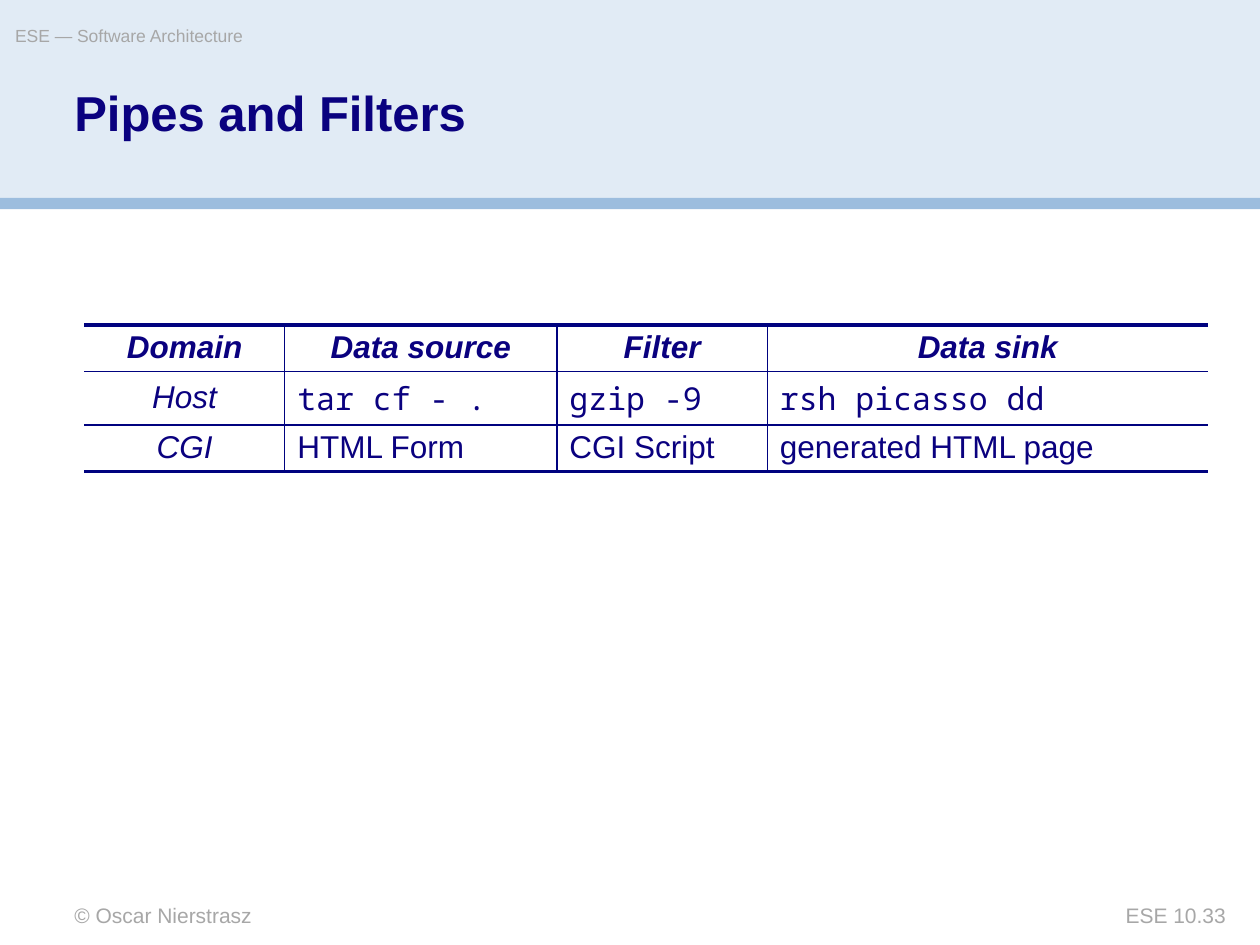
"""Build the Pipes and Filters slide on a grid of 100 columns by 75 rows."""
from dataclasses import dataclass

from lxml import etree
from pptx import Presentation
from pptx import util as u
from pptx.dml import color
from pptx.enum import shapes, text
from pptx.oxml import ns


@dataclass(frozen=True)
class Theme:
    band: str = "E1EBF5"
    rule: str = "9CBDDE"
    ink: str = "0A017F"
    border: str = "00027F"
    muted: str = "A7A7A7"
    sans: str = "Arial"
    mono: str = "Noto Sans Mono"
    title_size: float = 28
    cell_size: float = 18
    footer_size: float = 12
    header_size: float = 10
    thick: float = 2.25
    thin: float = 1


THEME = Theme()


@dataclass(frozen=True)
class Area:
    column: float
    row: float
    columns: float
    rows: float

    def place(self) -> tuple:
        return tuple(map(grid, (self.column, self.row, self.columns, self.rows)))


@dataclass(frozen=True)
class Style:
    size: float
    tint: str
    font: str = THEME.sans
    bold: bool = False
    italic: bool = False


@dataclass(frozen=True)
class Label:
    area: Area
    words: str
    size: float
    align: text.PP_ALIGN = text.PP_ALIGN.LEFT
    wrap: bool = True


BANDS = [
    (Area(0, 0, 100, 15.8), THEME.band),
    (Area(0, 15.7, 100, 0.9), THEME.rule),
]
LABELS = [
    Label(Area(5.9, 71.6, 41.7, 2), "© Oscar Nierstrasz", THEME.footer_size),
    Label(Area(1.2, 2, 59, 2.8), "ESE — Software Architecture", THEME.header_size, wrap=False),
    Label(Area(82.5, 71.6, 14.8, 2), "ESE 10.33", THEME.footer_size, text.PP_ALIGN.RIGHT),
]
TITLE_AREA = Area(5.9, 7.1, 72.4, 8.9)
TABLE_AREA = Area(6.7, 25.8, 89.2, 11.6)
COLUMN_SPANS = (15.9, 21.6, 16.7, 35)
ROW_SPANS = (3.7, 4.2, 3.7)
CELLS = [
    ("Domain", "Data source", "Filter", "Data sink"),
    ("Host", "tar cf - .", "gzip -9", "rsh picasso dd"),
    ("CGI", "HTML Form", "CGI Script", "generated HTML page"),
]
COMMAND_ROW = 1


def grid(units: float) -> int:
    """Turn grid units into a length."""
    return u.Inches(units / 10)


def write(frame, words: str, style: Style, align=text.PP_ALIGN.LEFT, spacing: float = 1) -> None:
    """Write one styled paragraph into a text frame."""
    para = frame.paragraphs[0]
    para.alignment = align
    para.line_spacing = spacing
    span = para.add_run()
    span.text = words
    font = span.font
    font.name, font.size = style.font, u.Pt(style.size)
    font.bold, font.italic = style.bold, style.italic
    font.color.rgb = color.RGBColor.from_string(style.tint)


def prepare(frame, wrap: bool = True) -> None:
    """Clear the insets and anchor the text at the top."""
    frame.margin_left = frame.margin_top = frame.margin_right = frame.margin_bottom = 0
    frame.vertical_anchor = text.MSO_ANCHOR.TOP
    frame.auto_size = text.MSO_AUTO_SIZE.NONE
    frame.word_wrap = wrap


def draw_band(page, area: Area, tint: str) -> None:
    """Draw a plain full-width band."""
    box = page.shapes.add_shape(shapes.MSO_SHAPE.RECTANGLE, *area.place())
    box.shadow.inherit = False
    box.fill.solid()
    box.fill.fore_color.rgb = color.RGBColor.from_string(tint)
    box.line.fill.background()


def draw_label(page, label: Label) -> None:
    """Draw a muted header or footer text."""
    frame = page.shapes.add_textbox(*label.area.place()).text_frame
    prepare(frame, label.wrap)
    write(frame, label.words, Style(label.size, THEME.muted), label.align)


def draw_title(page, words: str) -> None:
    """Move the title placeholder above the bands and fill it."""
    title = page.shapes.title
    title.left, title.top, title.width, title.height = TITLE_AREA.place()
    title.element.getparent().append(title.element)
    prepare(title.text_frame)
    write(title.text_frame, words, Style(THEME.title_size, THEME.ink, bold=True), spacing=0.9)


def set_borders(cell, widths: dict[str, float]) -> None:
    """Set the cell's four borders, where zero width means none."""
    properties = cell._tc.get_or_add_tcPr()
    for side, width in widths.items():
        line = etree.SubElement(properties, ns.qn(f"a:ln{side}"), w=str(u.Pt(width)))
        if width:
            fill = etree.SubElement(line, ns.qn("a:solidFill"))
            etree.SubElement(fill, ns.qn("a:srgbClr"), val=THEME.border)
        else:
            etree.SubElement(line, ns.qn("a:noFill"))


def cell_style(row: int, column: int) -> Style:
    """Choose the style of a heading, row name, command or plain cell."""
    command = row == COMMAND_ROW and column > 0
    return Style(THEME.cell_size, THEME.ink, THEME.mono if command else THEME.sans,
                 bold=row == 0, italic=row == 0 or column == 0)


def draw_table(page) -> None:
    """Draw the ruled table, open at its left and right sides."""
    last_row, last_column = len(ROW_SPANS) - 1, len(COLUMN_SPANS) - 1
    table = page.shapes.add_table(last_row + 1, last_column + 1, *TABLE_AREA.place()).table
    table.first_row = table.horz_banding = False
    for column, span in zip(table.columns, COLUMN_SPANS):
        column.width = grid(span)
    for row, span in zip(table.rows, ROW_SPANS):
        row.height = grid(span)
    for r, words in enumerate(CELLS):
        for c, word in enumerate(words):
            cell = table.cell(r, c)
            heading = r == 0 or c == 0
            set_borders(cell, {
                "L": THEME.thin if c > 0 else 0,
                "R": THEME.thin if c < last_column else 0,
                "T": THEME.thick if r == 0 else THEME.thin,
                "B": THEME.thick if r == last_row else THEME.thin,
            })
            cell.fill.background()
            cell.vertical_anchor = text.MSO_ANCHOR.MIDDLE if heading else text.MSO_ANCHOR.TOP
            align = text.PP_ALIGN.CENTER if heading else text.PP_ALIGN.LEFT
            write(cell.text_frame, word, cell_style(r, c), align, 0.95)


def main() -> None:
    """Build and save the deck."""
    deck = Presentation()
    deck.slide_width, deck.slide_height = grid(100), grid(75)
    page = deck.slides.add_slide(deck.slide_layouts.get_by_name("Title Only"))
    for area, tint in BANDS:
        draw_band(page, area, tint)
    for label in LABELS:
        draw_label(page, label)
    draw_title(page, "Pipes and Filters")
    draw_table(page)
    deck.save("out.pptx")


if __name__ == "__main__":
    main()
